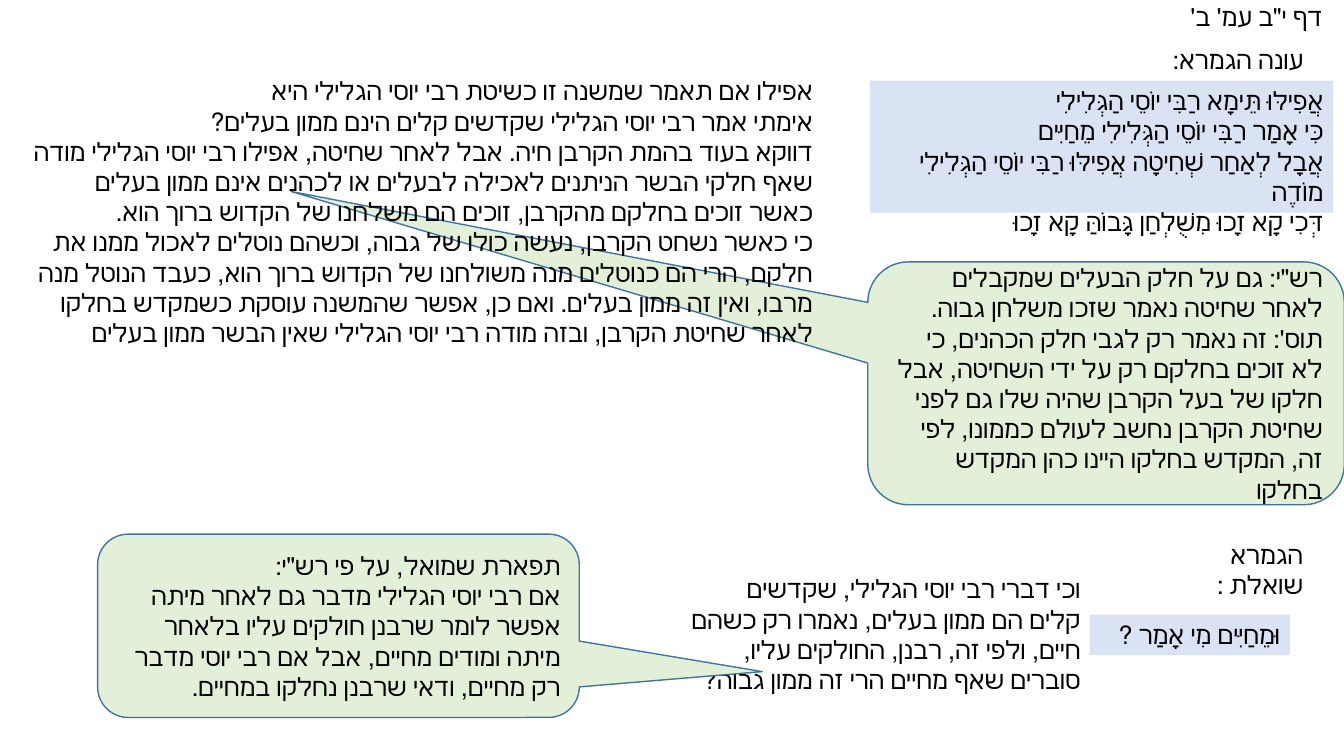
from dataclasses import dataclass

from pptx import Presentation
from pptx.dml.color import RGBColor
from pptx.enum.lang import MSO_LANGUAGE_ID
from pptx.enum.shapes import MSO_SHAPE
from pptx.enum.text import MSO_ANCHOR, MSO_AUTO_SIZE, PP_ALIGN
from pptx.util import Cm, Pt


@dataclass(frozen=True)
class Theme:
    text: RGBColor = RGBColor(0, 0, 0)
    quote: RGBColor = RGBColor.from_string("DAE3F3")
    note: RGBColor = RGBColor.from_string("E2F0D9")
    outline: RGBColor = RGBColor.from_string("43739E")
    size: Pt = Pt(18)
    line: Pt = Pt(1)
    body_font: str = "Calibri"
    quote_font: str = "Arial"


class Page:
    def __init__(self, s, theme):
        self.s = s
        self.theme = theme

    def add_words(self, sp, paragraphs, font, wrap=True):
        """Fill a shape with right-to-left paragraphs."""
        tf = sp.text_frame
        tf.word_wrap = wrap
        for i, words in enumerate(paragraphs):
            p = tf.paragraphs[0] if i == 0 else tf.add_paragraph()
            p.alignment = PP_ALIGN.RIGHT
            p._p.get_or_add_pPr().set("rtl", "1")
            r = p.add_run()
            r.text = words
            r.font.name = font
            r.font.size = self.theme.size
            r.font.color.rgb = self.theme.text
            r.font.language_id = MSO_LANGUAGE_ID.HEBREW
        return tf

    def text(self, box, *paragraphs, wrap=True):
        sp = self.s.shapes.add_textbox(*map(Cm, box))
        tf = self.add_words(sp, paragraphs, self.theme.body_font, wrap)
        tf.auto_size = MSO_AUTO_SIZE.SHAPE_TO_FIT_TEXT

    def shape(self, kind, box, fill):
        sp = self.s.shapes.add_shape(kind, *map(Cm, box))
        sp.shadow.inherit = False
        sp.fill.solid()
        sp.fill.fore_color.rgb = fill
        return sp

    def quote(self, box, *paragraphs, wrap=True):
        sp = self.shape(MSO_SHAPE.RECTANGLE, box, self.theme.quote)
        sp.line.fill.background()
        tf = self.add_words(sp, paragraphs, self.theme.quote_font, wrap)
        tf.vertical_anchor = MSO_ANCHOR.TOP
        tf.auto_size = MSO_AUTO_SIZE.SHAPE_TO_FIT_TEXT

    def callout(self, box, tip, *paragraphs):
        sp = self.shape(MSO_SHAPE.ROUNDED_RECTANGULAR_CALLOUT, box, self.theme.note)
        sp.adjustments[0], sp.adjustments[1] = tip
        sp.line.color.rgb = self.theme.outline
        sp.line.width = self.theme.line
        tf = self.add_words(sp, paragraphs, self.theme.body_font)
        tf.vertical_anchor = MSO_ANCHOR.MIDDLE


def main():
    prs = Presentation()
    prs.slide_width, prs.slide_height = Cm(33.87), Cm(19.05)
    page = Page(prs.slides.add_slide(prs.slide_layouts[6]), Theme())

    # Page reference and the answer
    page.text((29.34, -0.08, 4.24, 1.02), "דף י\"ב עמ' ב'")
    page.text((28.5, 0.99, 4.6, 1.02), "עונה הגמרא:")
    page.quote(
        (21.92, 2.03, 11.68, 3.33),
        "אֲפִילּוּ תֵּימָא רַבִּי יוֹסֵי הַגְּלִילִי ",
        "כִּי אָמַר רַבִּי יוֹסֵי הַגְּלִילִי מֵחַיִּים ",
        "אֲבָל לְאַחַר שְׁחִיטָה אֲפִילּוּ רַבִּי יוֹסֵי הַגְּלִילִי מוֹדֶה ",
        "דְּכִי קָא זָכוּ מִשֻּׁלְחַן גָּבוֹהַּ קָא זָכוּ ",
    )

    # Commentary on the answer, and its explanation
    page.callout(
        (21.87, 6.6, 12.01, 6.12), (-1.71, -0.79),
        "רש\"י: גם על חלק הבעלים שמקבלים לאחר שחיטה נאמר שזכו משלחן גבוה. ",
        "תוס': זה נאמר רק לגבי חלק הכהנים, כי לא זוכים בחלקם רק על ידי השחיטה, "
        "אבל חלקו של בעל הקרבן שהיה שלו גם לפני שחיטת הקרבן נחשב לעולם כממונו, "
        "לפי זה, המקדש בחלקו היינו כהן המקדש בחלקו",
    )
    page.text(
        (0, 1.78, 20.73, 7.19),
        "אפילו אם תאמר שמשנה זו כשיטת רבי יוסי הגלילי היא",
        "אימתי אמר רבי יוסי הגלילי שקדשים קלים הינם ממון בעלים? ",
        "דווקא בעוד בהמת הקרבן חיה. אבל לאחר שחיטה, אפילו רבי יוסי הגלילי מודה "
        "שאף חלקי הבשר הניתנים לאכילה לבעלים או לכהנים אינם ממון בעלים",
        "כאשר זוכים בחלקם מהקרבן, זוכים הם משלחנו של הקדוש ברוך הוא. ",
        "כי כאשר נשחט הקרבן, נעשה כולו של גבוה, וכשהם נוטלים לאכול ממנו את חלקם, "
        "הרי הם כנוטלים מנה משולחנו של הקדוש ברוך הוא, כעבד הנוטל מנה מרבו, "
        "ואין זה ממון בעלים. ואם כן, אפשר שהמשנה עוסקת כשמקדש בחלקו "
        "לאחר שחיטת הקרבן, ובזה מודה רבי יוסי הגלילי שאין הבשר ממון בעלים ",
    )

    # The question that follows
    page.text(
        (17.17, 14.33, 10.31, 3.33),
        "וכי דברי רבי יוסי הגלילי, שקדשים קלים הם ממון בעלים, נאמרו רק כשהם חיים, "
        "ולפי זה, רבנן, החולקים עליו, סוברים שאף מחיים הרי זה ממון גבוה? ",
    )
    page.text((28.47, 13.46, 4.62, 1.02), "הגמרא שואלת : ", wrap=False)
    page.quote((27.46, 15.49, 5.05, 1.02), "וּמֵחַיִּים מִי אָמַר ?  ", wrap=False)
    page.callout(
        (2.46, 13.46, 12.14, 4.62), (0.88, 0.25),
        "תפארת שמואל, על פי רש\"י:",
        "אם רבי יוסי הגלילי מדבר גם לאחר מיתה אפשר לומר שרבנן חולקים עליו בלאחר מיתה "
        "ומודים מחיים, אבל אם רבי יוסי מדבר רק מחיים, ודאי שרבנן נחלקו במחיים. ",
    )

    prs.save("out.pptx")


if __name__ == "__main__":
    main()
